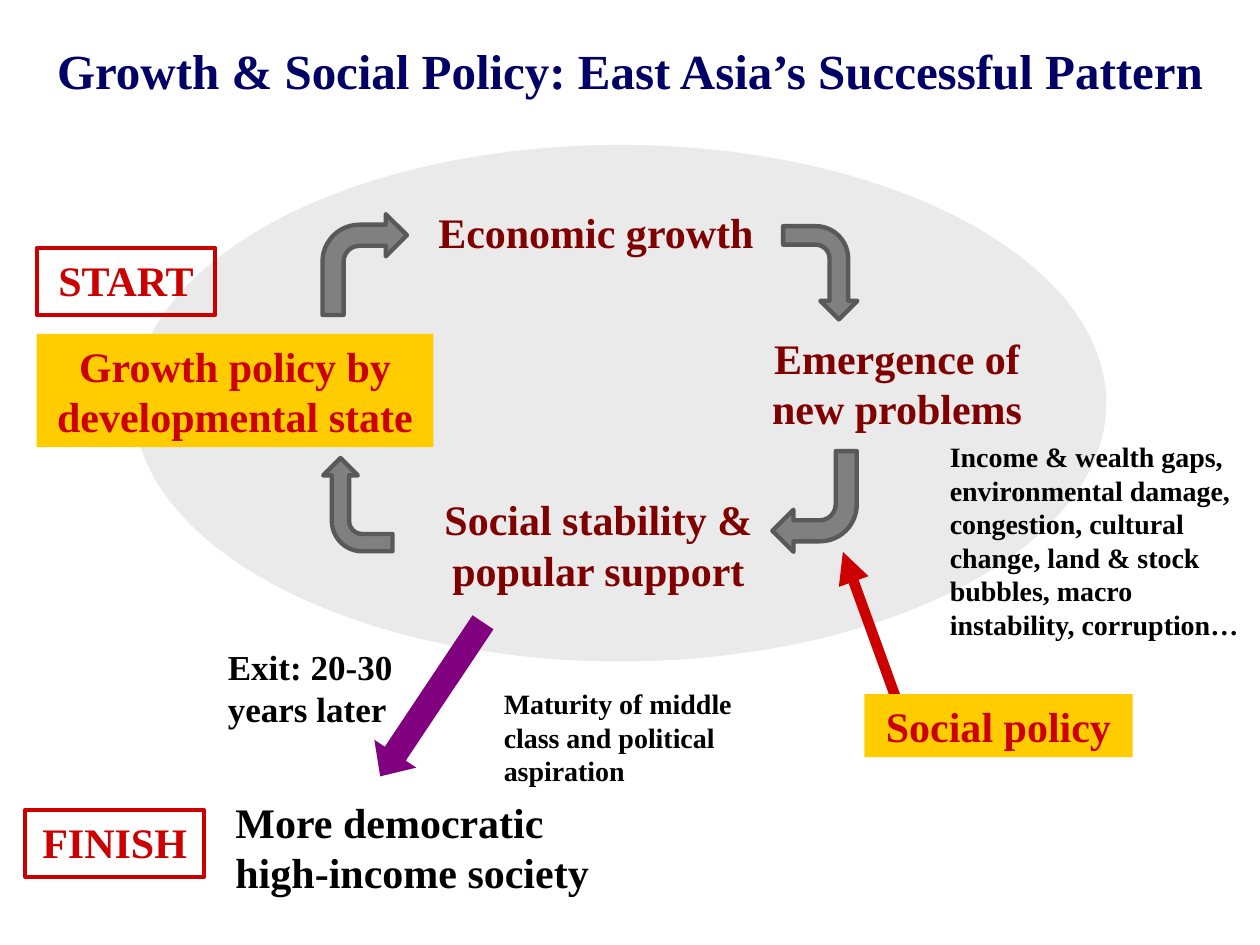
"""Build the slide on growth and social policy in East Asia."""
from lxml import etree
from pptx import Presentation
from pptx import util as u
from pptx.dml.color import RGBColor
from pptx.enum import shapes, text
from pptx.oxml import ns

COLORS = {
    "title": "000066", "stage": "800000", "accent": "CC0000", "note": "000000",
    "oval": "EAEAEA", "policy": "FFCC00", "exit": "800080",
    "arrow": "808080", "arrow_line": "595959",
}
STYLES = {
    "title": {"size": 28, "color": "title", "centred": True},
    "stage": {"size": 24, "color": "stage", "centred": True},
    "accent": {"size": 24, "color": "accent", "centred": True},
    "outcome": {"size": 24, "color": "note", "centred": False},
    "exit": {"size": 20, "color": "note", "centred": False},
    "note": {"size": 16, "color": "note", "centred": False},
}


def rgb(name):
    """Return the named colour."""
    return RGBColor.from_string(COLORS[name])


def inside(box, left, top, width, height):
    """Return lengths for a place given in inches from the corner of a box."""
    return [u.Inches(n) for n in (box[0] + left, box[1] + top, width, height)]


def set_values(target, values):
    """Set each attribute in a dict of format values."""
    for name, value in values.items():
        setattr(target, name, value)


def write(shape, words, style):
    """Write one bold paragraph in the given style."""
    look = STYLES[style]
    set_values(shape.text_frame, {
        "word_wrap": True,
        "auto_size": text.MSO_AUTO_SIZE.SHAPE_TO_FIT_TEXT,
        "vertical_anchor": text.MSO_ANCHOR.TOP,
    })
    paragraph = shape.text_frame.paragraphs[0]
    paragraph.text = words
    align = text.PP_ALIGN
    paragraph.alignment = align.CENTER if look["centred"] else align.LEFT
    font = paragraph.runs[0].font
    set_values(font, {"name": "Times New Roman", "size": u.Pt(look["size"]), "bold": True})
    font.color.rgb = rgb(look["color"])


def add_label(slide, place, words, style):
    """Add a text box."""
    write(slide.shapes.add_textbox(*place), words, style)


def add_figure(slide, kind, place, fill=None, line=None, weight=0, rotation=0):
    """Add a preset shape with flat fill and line."""
    shape = slide.shapes.add_shape(kind, *place)
    set_values(shape, {"rotation": rotation})
    shape.shadow.inherit = False
    for part, color in ((shape.fill, fill), (shape.line.fill, line)):
        if color:
            part.solid()
            part.fore_color.rgb = rgb(color)
        else:
            part.background()
    if line:
        shape.line.width = u.Pt(weight)
    return shape


def add_policy(slide, place, words):
    """Add a yellow policy box."""
    shape = add_figure(slide, shapes.MSO_SHAPE.RECTANGLE, place, "policy")
    write(shape, words, "accent")


def add_marker(slide, box, left, top, words):
    """Add a red outlined marker."""
    place = inside(box, left, top, 1.42, 0.53)
    shape = add_figure(slide, shapes.MSO_SHAPE.RECTANGLE, place, line="accent", weight=2.25)
    write(shape, words, "accent")


def add_pointer(slide, start, end):
    """Add a thick red line with an arrowhead at its end."""
    points = [u.Inches(n) for n in (*start, *end)]
    connector = slide.shapes.add_connector(shapes.MSO_CONNECTOR.STRAIGHT, *points)
    connector.line.color.rgb = rgb("accent")
    connector.line.width = u.Pt(6)
    line = connector.line._get_or_add_ln()
    etree.SubElement(line, ns.qn("a:tailEnd"), type="triangle")
    etree.SubElement(connector._element.spPr, ns.qn("a:effectLst"))


def add_title(slide, box):
    """Place the title."""
    words = "Growth & Social Policy: East Asia’s Successful Pattern"
    add_label(slide, inside(box, 0, 0, *box[2:]), words, "title")


def add_cycle(slide, box):
    """Place the oval, its stages and the bent arrows between them."""
    add_figure(slide, shapes.MSO_SHAPE.OVAL, inside(box, 0, 0, *box[2:]), "oval")
    stages = (
        ("Economic growth", 2.25, 0.44, 2.84, 0.5),
        ("Emergence of new problems", 4.72, 1.44, 2.68, 0.9),
        ("Social stability & popular support", 2.31, 2.72, 2.76, 0.9),
    )
    for words, *place in stages:
        add_label(slide, inside(box, *place), words, "stage")
    arrows = (
        (1.5, 0.55, 0.67, 0.8), (5.08, 0.72, 0.74, 0.59),
        (5.07, 2.43, 0.67, 0.8), (1.41, 2.58, 0.74, 0.55),
    )
    for turn, place in enumerate(arrows):
        add_figure(slide, shapes.MSO_SHAPE.BENT_ARROW, inside(box, *place),
                   "arrow", "arrow_line", 2.5, 90 * turn)


def add_start(slide, box):
    """Place the start marker above the growth policy."""
    place = inside(box, 0, 0.68, box[2], 0.9)
    add_policy(slide, place, "Growth policy by developmental state")
    add_marker(slide, box, 0, 0, "START")


def add_problems(slide, box):
    """Place the list of problems and the social policy that answers them."""
    words = ("Income & wealth gaps, environmental damage, congestion, cultural change, "
             "land & stock bubbles, macro instability, corruption…")
    add_label(slide, inside(box, 0.75, 0, 2.56, 1.72), words, "note")
    left, top = box[:2]
    add_pointer(slide, (left + 0.46, top + 2.21), (left, top + 0.94))
    add_policy(slide, inside(box, 0.17, 2.07, 2.13, 0.5), "Social policy")


def add_exit(slide, box):
    """Place the exit arrow, its notes and the finish."""
    arrow = add_figure(slide, shapes.MSO_SHAPE.RIGHT_ARROW,
                       inside(box, 2.49, 0.28, 1.47, 0.4), "exit", rotation=123.7)
    arrow.adjustments[1] = 0.54
    notes = (
        ("Exit: 20-30 years later", "exit", 1.51, 0, 1.65, 0.78),
        ("More democratic high-income society", "outcome", 1.57, 1.2, 3.39, 0.9),
        ("Maturity of middle class and political aspiration", "note", 3.7, 0.33, 2.13, 0.9),
    )
    for words, style, *place in notes:
        add_label(slide, inside(box, *place), words, style)
    add_marker(slide, box, 0, 1.36, "FINISH")


def main():
    """Build and save the presentation."""
    presentation = Presentation()
    set_values(presentation, {"slide_width": u.Inches(10), "slide_height": u.Inches(7.5)})
    slide = presentation.slides.add_slide(presentation.slide_layouts[6])
    add_title(slide, (0.12, 0.27, 9.76, 0.57))
    add_cycle(slide, (1.06, 1.15, 7.72, 4.1))
    add_start(slide, (0.29, 1.97, 3.15, 1.58))
    add_problems(slide, (6.69, 3.44, 3.31, 2.57))
    add_exit(slide, (0.2, 5.07, 5.83, 2.1))
    presentation.save("out.pptx")


if __name__ == "__main__":
    main()
